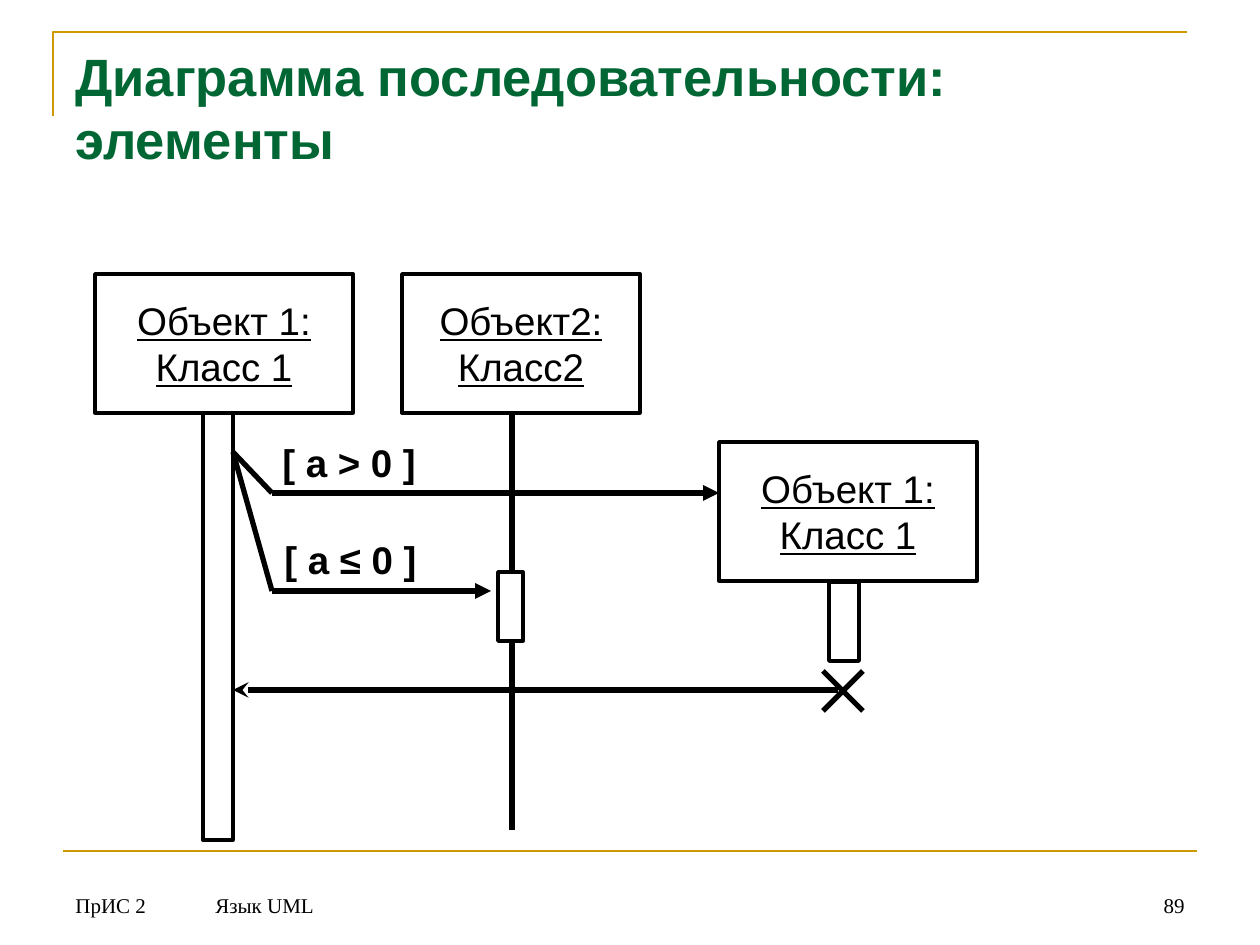
from pptx import Presentation
from pptx.dml.color import RGBColor
from pptx.enum.shapes import MSO_CONNECTOR, MSO_SHAPE
from pptx.enum.text import MSO_ANCHOR as Anchor, PP_ALIGN as Align
from pptx.oxml.ns import qn
from pptx.util import Pt
from lxml.etree import SubElement

EMU_PER_PX = 914400 / 126
BLACK = RGBColor(0x00, 0x00, 0x00)
WHITE = RGBColor(0xFF, 0xFF, 0xFF)
GOLD = RGBColor(0xCC, 0x99, 0x00)
GREEN = RGBColor(0x00, 0x66, 0x33)


def px(*lengths):
    return [round(length * EMU_PER_PX) for length in lengths]


def write_text(shape, lines, size=22, font="Arial", color=BLACK, bold=False,
               underline=False, align=Align.LEFT, anchor=Anchor.TOP):
    frame = shape.text_frame
    frame.word_wrap = True
    frame.vertical_anchor = anchor
    for index, line in enumerate(lines):
        paragraph = frame.add_paragraph() if index else frame.paragraphs[0]
        paragraph.alignment = align
        run = paragraph.add_run()
        run.text = line
        run.font.size = Pt(size)
        run.font.name = font
        run.font.color.rgb = color
        run.font.bold = bold
        run.font.underline = underline


def add_text(slide, box, text, **text_format):
    write_text(slide.shapes.add_textbox(*px(*box)), [text], **text_format)


def add_box(slide, box, fill=None):
    shape = slide.shapes.add_shape(MSO_SHAPE.RECTANGLE, *px(*box))
    shape.shadow.inherit = False
    if fill is None:
        shape.fill.background()
    else:
        shape.fill.solid()
        shape.fill.fore_color.rgb = fill
    shape.line.color.rgb = BLACK
    shape.line.width = Pt(2)
    return shape


def add_object(slide, left, top, width, lines):
    """Draw a named object of the sequence diagram."""
    write_text(add_box(slide, (left, top, width, 139)), lines,
               underline=True, align=Align.CENTER, anchor=Anchor.MIDDLE)


def add_line(slide, start, end, color=BLACK, width=3, arrow=None):
    line = slide.shapes.add_connector(MSO_CONNECTOR.STRAIGHT, *px(*start, *end))
    line.line.color.rgb = color
    line.line.width = Pt(width)
    if arrow:
        SubElement(line.line._get_or_add_ln(), qn("a:tailEnd"), type=arrow)
    SubElement(line._element.spPr, qn("a:effectLst"))


def add_title_corner(slide):
    start, *points = [px(53, 116), px(53, 32), px(1187, 32)]
    builder = slide.shapes.build_freeform(*start)
    builder.add_line_segments(points, close=False)
    corner = builder.convert_to_shape()
    corner.shadow.inherit = False
    corner.fill.background()
    corner.line.color.rgb = GOLD
    corner.line.width = Pt(1.5)


def add_footer(slide):
    add_line(slide, (63, 851), (1197, 851), color=GOLD, width=1.5)
    for left, width, text, align in [
        (63, 121, "ПрИС 2", Align.LEFT),
        (203, 912, "Язык UML", Align.LEFT),
        (1126, 71, "89", Align.RIGHT),
    ]:
        add_text(slide, (left, 861, width, 63), text, size=12,
                 font="Times New Roman", align=align, anchor=Anchor.BOTTOM)


def add_objects(slide):
    add_object(slide, 95, 274, 258, ["Объект 1:", "Класс 1"])
    add_object(slide, 402, 274, 238, ["Объект2:", "Класс2"])
    add_object(slide, 719, 442, 258, ["Объект 1:", "Класс 1"])
    add_line(slide, (512, 413), (512, 830))
    for bar in [(203, 413, 30, 427), (498, 572, 25, 69), (829, 582, 30, 79)]:
        add_box(slide, bar, fill=WHITE)


def add_messages(slide):
    fork = (233, 452)
    for elbow, target in [((272, 493), 719), ((272, 591), 491)]:
        add_line(slide, fork, elbow)
        add_line(slide, elbow, (target, elbow[1]), arrow="triangle")
    add_text(slide, (270, 433, 160, 59), "[ a > 0 ]", bold=True)
    add_text(slide, (272, 530, 159, 59), "[ a ≤ 0 ]", bold=True)
    add_line(slide, (838, 690), (233, 690), arrow="stealth")


def add_destruction_mark(slide):
    add_line(slide, (863, 671), (823, 711))
    add_line(slide, (823, 671), (863, 711))


def main():
    presentation = Presentation()
    presentation.slide_width, presentation.slide_height = px(1260, 945)
    slide = presentation.slides.add_slide(presentation.slide_layouts[6])
    add_title_corner(slide)
    add_footer(slide)
    add_text(slide, (63, 38, 1134, 207), "Диаграмма последовательности: элементы",
             size=30, color=GREEN, bold=True)
    add_objects(slide)
    add_messages(slide)
    add_destruction_mark(slide)
    presentation.save("out.pptx")


if __name__ == "__main__":
    main()
